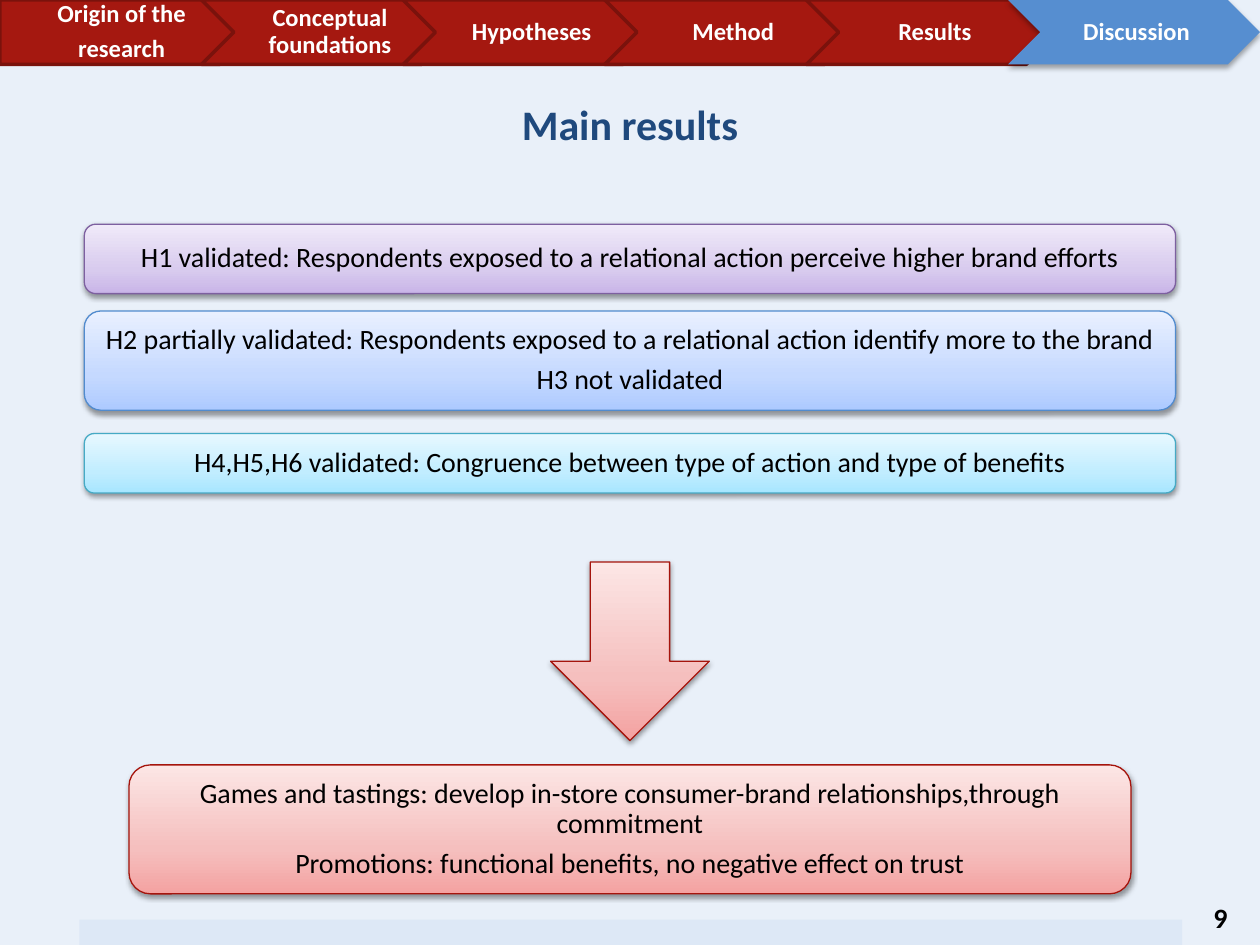
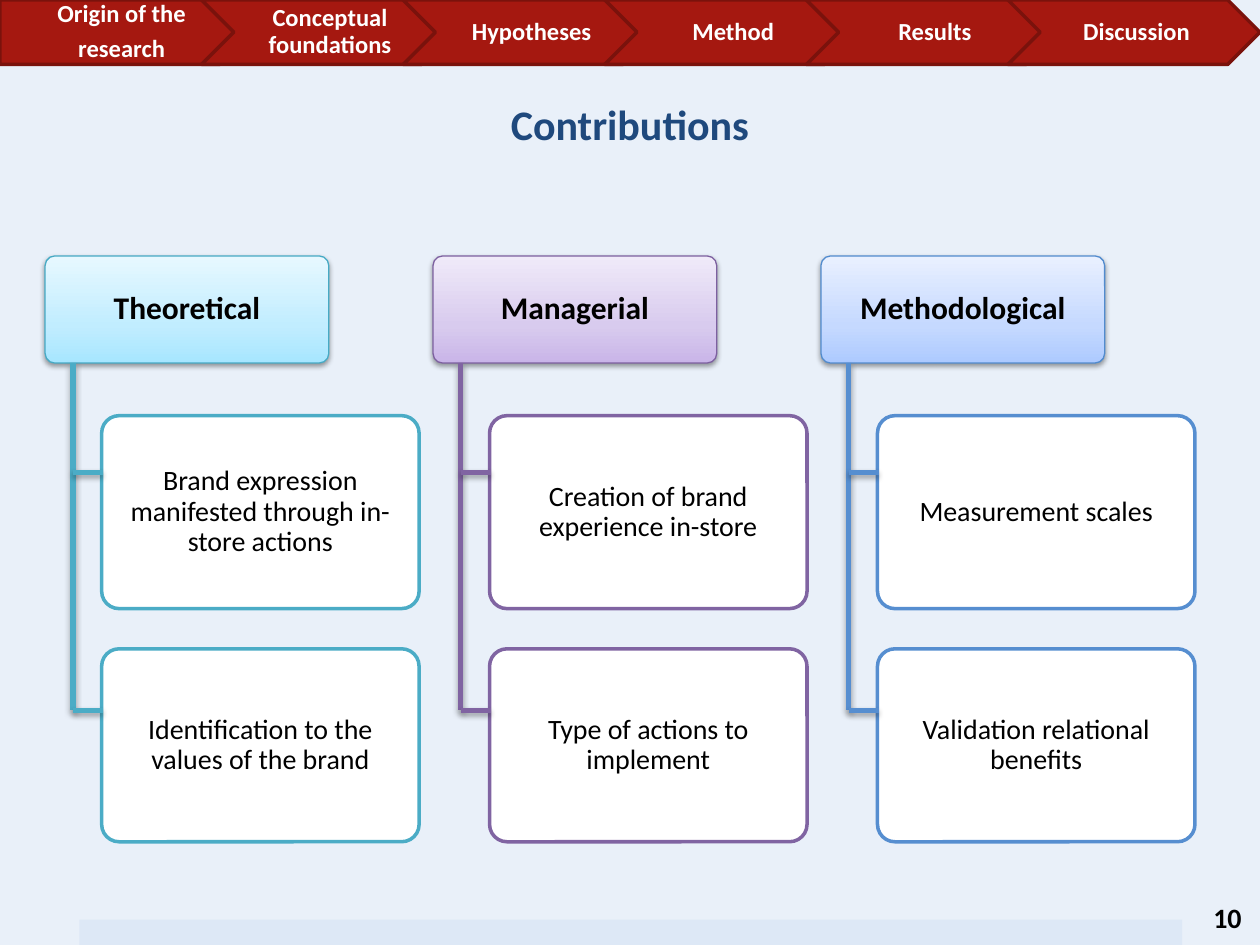
from copy import deepcopy
from dataclasses import dataclass
from typing import NamedTuple

from lxml import etree
from pptx import Presentation
from pptx.dml.color import RGBColor
from pptx.enum.shapes import MSO_CONNECTOR, MSO_SHAPE
from pptx.enum.text import MSO_ANCHOR, PP_ALIGN
from pptx.oxml.ns import qn
from pptx.util import Cm, Pt

CENTER, LEFT = PP_ALIGN.CENTER, PP_ALIGN.LEFT
MIDDLE, TOP = MSO_ANCHOR.MIDDLE, MSO_ANCHOR.TOP
RECTANGLE, ROUNDED = MSO_SHAPE.RECTANGLE, MSO_SHAPE.ROUNDED_RECTANGLE
PENTAGON, CHEVRON = MSO_SHAPE.PENTAGON, MSO_SHAPE.CHEVRON
DOWN_ARROW = MSO_SHAPE.DOWN_ARROW
STRAIGHT = MSO_CONNECTOR.STRAIGHT


class Box(NamedTuple):
    """Position and size in centimetres."""
    left: float
    top: float
    width: float
    height: float

    def lengths(self):
        """Return the four values as slide lengths."""
        return [Cm(value) for value in self]


@dataclass(frozen=True)
class Palette:
    """Gradient from bottom to top, its edge, and the solid accent."""
    gradient: tuple
    edge: str
    accent: str


@dataclass(frozen=True)
class Theme:
    """Colours and type sizes of the presentation."""
    font: str = "Calibri"
    background: str = "E9F0F9"
    band: str = "DDE8F6"
    title: str = "1F497D"
    text: str = "000000"
    light: str = "FFFFFF"
    stage: str = "A51810"
    stage_edge: str = "7A120C"
    active_stage: str = "568ED0"
    purple: Palette = Palette(("C9B5E8", "D8CBEE", "F0EAF9"), "7D60A0", "8064A2")
    blue: Palette = Palette(("ADCAFF", "C5D9FF", "E9F0FF"), "518BCE", "568ED0")
    cyan: Palette = Palette(("A7E6FF", "C1EDFF", "E7F8FF"), "46AAC5", "4BACC6")
    red: Palette = Palette(("F4A2A1", "F5BFBE", "FCE6E5"), "A5140C", "A5140C")
    title_size: int = 24
    header_size: int = 18
    body_size: int = 16
    stage_size: int = 14


THEME = Theme()
SLIDE = Box(0, 0, 25.4, 19.05)
STAGE_BAR = Box(0, 0, 25.4, 1.3)
TITLE = Box(5.87, 1.85, 13.66, 1.27)
FOOTER = Box(1.6, 18.03, 22.23, 1.02)
RESULTS = Box(1.7, 4.52, 22, 13.5)
CONTRIBUTIONS = Box(0.91, 5.16, 23.18, 11.81)
STAGES = [["Origin of the", "research"], ["Conceptual foundations"],
          ["Hypotheses"], ["Method"], ["Results"], ["Discussion"]]


def rgb(color):
    """Turn a hex string into a colour."""
    return RGBColor.from_string(color)


def add_shadow(properties, opacity, distance):
    """Give shape properties a soft shadow that falls downwards."""
    effects = properties.find(qn("a:effectLst"))
    if effects is None:
        effects = etree.SubElement(properties, qn("a:effectLst"))
    shadow = etree.SubElement(effects, qn("a:outerShdw"), blurRad="40000",
                              dist=str(distance), dir="5400000", rotWithShape="0")
    color = etree.SubElement(shadow, qn("a:srgbClr"), val="000000")
    etree.SubElement(color, qn("a:alpha"), val=str(opacity * 1000))


def add_panel(slide, kind, box, fill, edge=None, edge_width=2):
    """Add a flat shape with a solid fill."""
    panel = slide.shapes.add_shape(kind, *box.lengths())
    panel.shadow.inherit = False
    panel.fill.solid()
    panel.fill.fore_color.rgb = rgb(fill)
    if edge:
        panel.line.color.rgb = rgb(edge)
        panel.line.width = Pt(edge_width)
    else:
        panel.line.fill.background()
    return panel


def add_glossy(slide, kind, box, palette):
    """Add a shape with a three-stop gradient and a shadow."""
    glossy = add_panel(slide, kind, box, palette.accent, palette.edge, 0.75)
    glossy.fill.gradient()
    glossy.fill.gradient_angle = 90
    stops = glossy.element.spPr.find(".//" + qn("a:gsLst"))
    stops.insert(1, deepcopy(stops[0]))
    for stop, position, color in zip(glossy.fill.gradient_stops, (0, 0.35, 1),
                                     palette.gradient):
        stop.position = position
        stop.color.rgb = rgb(color)
    add_shadow(glossy.element.spPr, 38, 20000)
    return glossy


def write(shape, lines, size, color=THEME.text, bold=False, align=CENTER,
          anchor=MIDDLE, insets=(0.25, 0.13, 0.25, 0.13), tight=True):
    """Write one paragraph per line into a shape."""
    frame = shape.text_frame
    frame.word_wrap = True
    frame.vertical_anchor = anchor
    (frame.margin_left, frame.margin_top,
     frame.margin_right, frame.margin_bottom) = [Cm(inset) for inset in insets]
    frame.text = "\n".join(lines)
    for paragraph in frame.paragraphs:
        paragraph.alignment = align
        paragraph.font.name = THEME.font
        paragraph.font.size = Pt(size)
        paragraph.font.bold = bold
        paragraph.font.color.rgb = rgb(color)
        if tight:
            paragraph.line_spacing = 0.9
            paragraph.space_after = Pt(size * 0.35)


def add_stage_bar(slide, box, active=None):
    """Add the row of stages, with the active one highlighted."""
    width = box.width / (1 + 0.8 * (len(STAGES) - 1))
    for index, stage in enumerate(STAGES):
        place = Box(box.left + index * width * 0.8, box.top, width, box.height)
        kind = CHEVRON if index else PENTAGON
        if stage[0] == active:
            step = add_panel(slide, kind, place, THEME.active_stage)
            add_shadow(step.element.spPr, 35, 23000)
        else:
            step = add_panel(slide, kind, place, THEME.stage, THEME.stage_edge)
        write(step, stage, THEME.stage_size, THEME.light, bold=True,
              insets=(0.15 if index else 0.2, 0.1, 0.05, 0.1))


def add_title(slide, box, title):
    """Add the slide title."""
    heading = slide.shapes.add_textbox(*box.lengths())
    write(heading, [title], THEME.title_size, THEME.title, bold=True,
          anchor=TOP, tight=False)


def add_footer(slide, box, number):
    """Add the bottom band and the page number to its right."""
    band = Box(box.left, box.top + box.height / 2, box.width, box.height / 2)
    add_panel(slide, RECTANGLE, band, THEME.band)
    corner = Box(box.left + box.width + 0.38, box.top, 1.19, box.height)
    page = slide.shapes.add_textbox(*corner.lengths())
    write(page, [str(number)], THEME.body_size, bold=True, align=LEFT,
          anchor=TOP, tight=False)


def add_results(slide, box):
    """Add the tested hypotheses, the arrow and the conclusion."""
    hypotheses = [
        (0, 1.4, THEME.purple,
         ["H1 validated: Respondents exposed to a relational action perceive"
          " higher brand efforts"]),
        (1.75, 2, THEME.blue,
         ["H2 partially validated: Respondents exposed to a relational action"
          " identify more to the brand", "H3 not validated"]),
        (4.22, 1.2, THEME.cyan,
         ["H4,H5,H6 validated: Congruence between type of action and type of"
          " benefits"]),
    ]
    for drop, height, palette, lines in hypotheses:
        place = Box(box.left, box.top + drop, box.width, height)
        write(add_glossy(slide, ROUNDED, place, palette), lines, THEME.body_size)

    conclusion = add_glossy(
        slide, ROUNDED,
        Box(box.left + 0.9, box.top + 10.9, box.width - 1.8, 2.6), THEME.red)
    write(conclusion,
          ["Games and tastings: develop in-store consumer-brand"
           " relationships,through commitment",
           "Promotions: functional benefits, no negative effect on trust"],
          THEME.body_size)
    arrow_width = 3.2
    add_glossy(slide, DOWN_ARROW,
               Box(box.left + (box.width - arrow_width) / 2, box.top + 6.81,
                   arrow_width, 3.6), THEME.red)


def add_tree_line(slide, start, end, color):
    """Add one line of a tree between two points."""
    points = [Cm(value) for value in (*start, *end)]
    line = slide.shapes.add_connector(STRAIGHT, *points)
    line.line.color.rgb = rgb(color)
    line.line.width = Pt(3)
    add_shadow(line.element.spPr, 35, 23000)


def add_contribution(slide, box, palette, heading, items):
    """Add a heading with its items hanging from a tree."""
    header_height, card_height, indent = 2.16, 3.89, 1.14
    header = add_glossy(slide, ROUNDED,
                        Box(box.left, box.top, 5.72, header_height), palette)
    header.adjustments[0] = 0.09
    write(header, [heading], THEME.header_size, bold=True,
          insets=(0.15, 0.13, 0.15, 0.13))

    for index, item in enumerate(items):
        place = Box(box.left + indent, box.top + 3.22 + index * 4.7,
                    box.width - indent, card_height)
        card = add_panel(slide, ROUNDED, place, THEME.light, palette.accent)
        card.adjustments[0] = 0.09
        write(card, [item], THEME.body_size, insets=(0.18, 0.15, 0.18, 0.15))

    trunk = box.left + 0.56
    branches = [box.top + 4.36 + index * 4.8 for index in range(len(items))]
    add_tree_line(slide, (trunk, box.top + header_height),
                  (trunk, branches[-1]), palette.accent)
    for branch in branches:
        add_tree_line(slide, (trunk, branch), (trunk + 0.6, branch),
                      palette.accent)


def add_contributions(slide, box):
    """Add the three columns of contributions."""
    columns = [
        (THEME.cyan, "Theoretical",
         ["Brand expression manifested through in-store actions",
          "Identification to the values of the brand"]),
        (THEME.purple, "Managerial",
         ["Creation of brand experience in-store",
          "Type of actions to implement"]),
        (THEME.blue, "Methodological",
         ["Measurement scales", "Validation relational benefits"]),
    ]
    gap = 0.28
    width = (box.width - gap * (len(columns) - 1)) / len(columns)
    for index, column in enumerate(columns):
        place = Box(box.left + index * (width + gap), box.top, width, box.height)
        add_contribution(slide, place, *column)


def add_slide(deck, title, number, add_content, content_box, active=None):
    """Add a slide with the shared parts around its content."""
    slide = deck.slides.add_slide(deck.slide_layouts[6])
    add_footer(slide, FOOTER, number)
    add_title(slide, TITLE, title)
    add_content(slide, content_box)
    add_stage_bar(slide, STAGE_BAR, active)


def main():
    """Build and save the presentation."""
    deck = Presentation()
    deck.slide_width, deck.slide_height = Cm(SLIDE.width), Cm(SLIDE.height)
    background = deck.slide_master.background.fill
    background.solid()
    background.fore_color.rgb = rgb(THEME.background)
    add_slide(deck, "Main results", 9, add_results, RESULTS, "Discussion")
    add_slide(deck, "Contributions", 10, add_contributions, CONTRIBUTIONS)
    deck.save("out.pptx")


if __name__ == "__main__":
    main()
